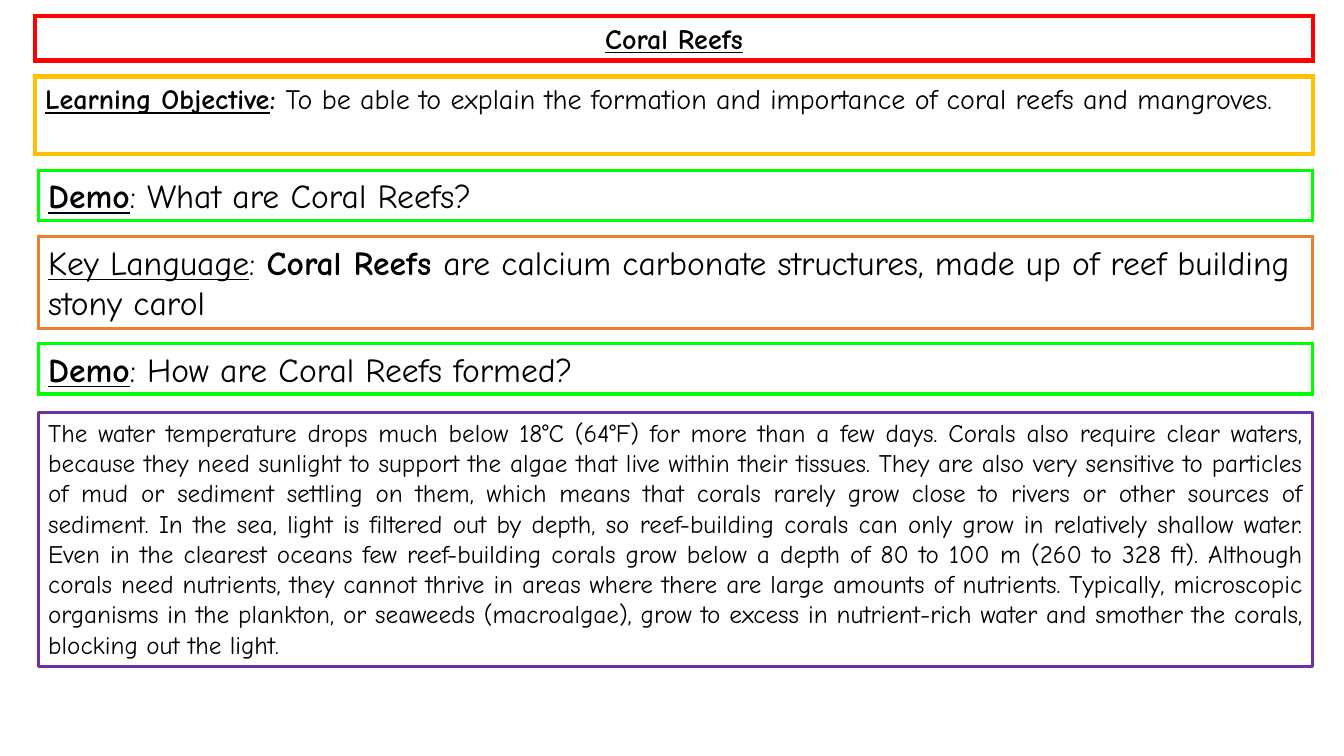
from dataclasses import dataclass

from lxml.etree import SubElement
from pptx import Presentation
from pptx.dml.color import RGBColor
from pptx.enum.text import MSO_ANCHOR, MSO_AUTO_SIZE, PP_ALIGN
from pptx.oxml.ns import qn
from pptx.shapes.autoshape import Shape
from pptx.util import Inches, Pt

FONT = "Comic Neue"
COLORS = {
    "text": "000000",
    "paper": "FFFFFF",
    "title": "FF0000",
    "objective": "FFC000",
    "demo": "00FF00",
    "language": "ED7D31",
    "reading": "7030A0",
}


@dataclass(frozen=True)
class Span:
    text: str
    bold: bool = False
    underline: bool = False


@dataclass(frozen=True)
class Panel:
    color: str
    left: float
    top: float
    width: float
    height: float
    size: int
    spans: tuple[Span, ...]
    border: float = 2.25
    align: PP_ALIGN = PP_ALIGN.LEFT
    filled: bool = False
    mitered: bool = True


TITLE = Panel("title", 0.35, 0.16, 12.67, 0.44, 20,
              (Span("Coral Reefs", True, True),),
              border=3, align=PP_ALIGN.CENTER, filled=True)

READING = (
    "The water temperature drops much below 18°C (64°F) for more than a few days.",
    "Corals also require clear waters, because they need sunlight to support the "
    "algae that live within their tissues.",
    "They are also very sensitive to particles of mud or sediment settling on them, "
    "which means that corals rarely grow close to rivers or other sources of sediment.",
    "In the sea, light is filtered out by depth, so reef-building corals can only "
    "grow in relatively shallow water.",
    "Even in the clearest oceans few reef-building corals grow below a depth of "
    "80 to 100 m (260 to 328 ft).",
    "Although corals need nutrients, they cannot thrive in areas where there are "
    "large amounts of nutrients.",
    "Typically, microscopic organisms in the plankton, or seaweeds (macroalgae), "
    "grow to excess in nutrient-rich water and smother the corals, blocking out "
    "the light.",
)


def demo(top: float, question: str) -> Panel:
    return Panel("demo", 0.38, top, 12.64, 0.5, 24,
                 (Span("Demo", True, True), Span(f": {question}")))


PANELS = (
    Panel("objective", 0.35, 0.76, 12.67, 0.77, 20,
          (Span("Learning Objective", True, True), Span(": ", True),
           Span("To be able to explain the formation and importance of coral "
                "reefs and mangroves.")),
          border=3, filled=True),
    demo(1.69, "What are Coral Reefs?"),
    Panel("language", 0.38, 2.35, 12.64, 0.91, 24,
          (Span("Key Language", underline=True), Span(": "),
           Span("Coral Reefs ", True),
           Span("are calcium carbonate structures, made up of reef building "
                "stony carol"))),
    demo(3.41, "How are Coral Reefs formed?"),
    Panel("reading", 0.38, 4.09, 12.64, 2.52, 18, (Span(" ".join(READING)),),
          align=PP_ALIGN.JUSTIFY, mitered=False),
)


def rgb(name: str) -> RGBColor:
    return RGBColor.from_string(COLORS[name])


def format_panel(sp: Shape, panel: Panel) -> None:
    sp.left, sp.top = Inches(panel.left), Inches(panel.top)
    sp.width, sp.height = Inches(panel.width), Inches(panel.height)
    if panel.filled:
        sp.fill.solid()
        sp.fill.fore_color.rgb = rgb("paper")
    sp.line.color.rgb = rgb(panel.color)
    sp.line.width = Pt(panel.border)
    if panel.mitered:
        ln = sp.line.fill._xPr
        SubElement(ln, qn("a:miter"), lim="800000")

    tf = sp.text_frame
    tf.word_wrap = True
    tf.auto_size = MSO_AUTO_SIZE.NONE
    tf.vertical_anchor = MSO_ANCHOR.TOP
    p = tf.paragraphs[0]
    p.alignment = panel.align
    p.font.name = FONT
    p.font.size = Pt(panel.size)
    p.font.color.rgb = rgb("text")
    for span in panel.spans:
        r = p.add_run()
        r.text = span.text
        r.font.bold = span.bold
        r.font.underline = span.underline


def main() -> None:
    prs = Presentation()
    prs.slide_width, prs.slide_height = Inches(13.33), Inches(7.5)
    s = prs.slides.add_slide(prs.slide_layouts[5])
    format_panel(s.shapes.title, TITLE)
    for panel in PANELS:
        format_panel(s.shapes.add_textbox(0, 0, 0, 0), panel)
    prs.save("out.pptx")


if __name__ == "__main__":
    main()
